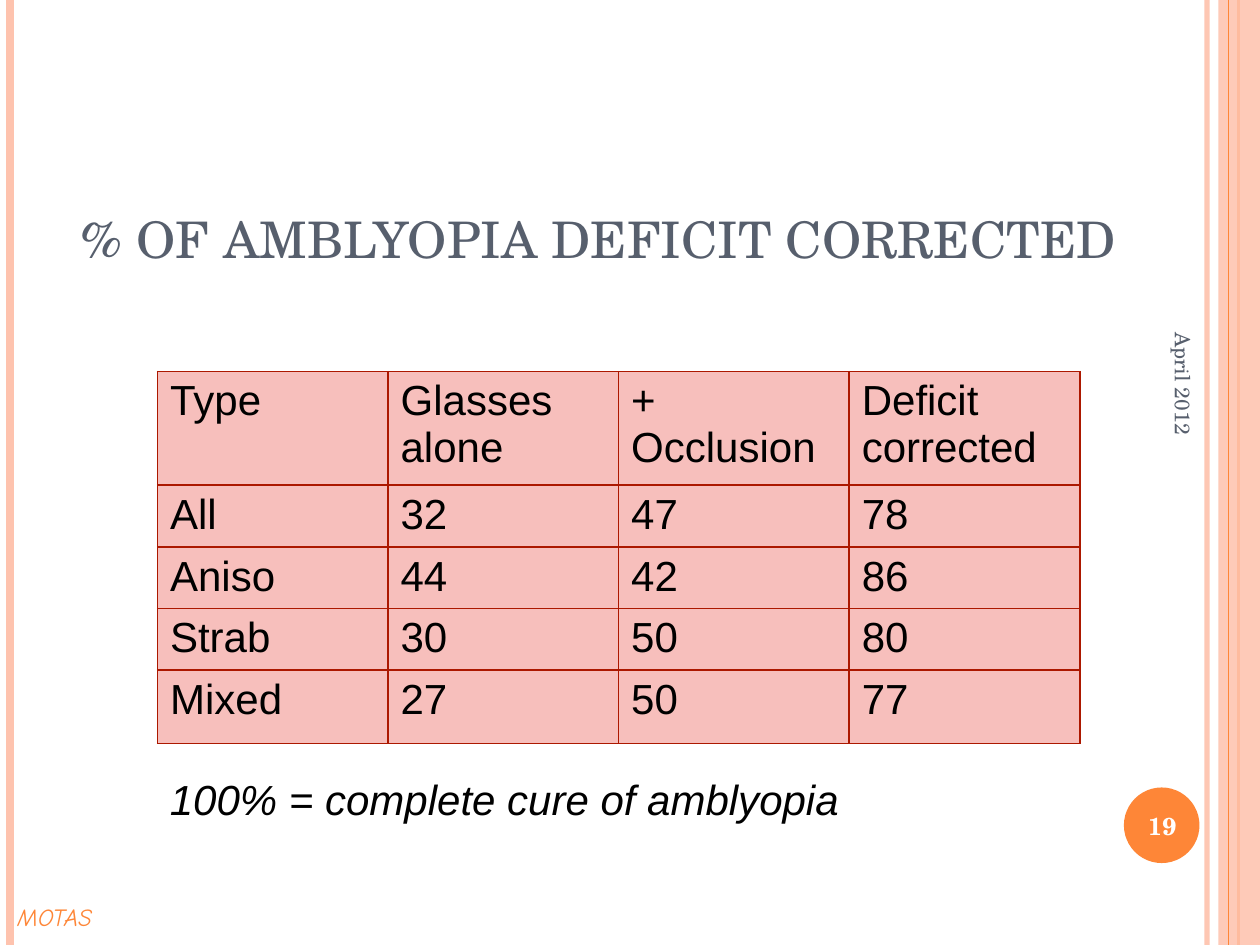
from dataclasses import dataclass
from typing import Optional

from lxml.etree import SubElement
from pptx import Presentation
from pptx.dml.color import RGBColor
from pptx.enum.shapes import MSO_CONNECTOR, MSO_SHAPE
from pptx.enum.text import MSO_ANCHOR as Anchor, MSO_AUTO_SIZE as AutoSize, PP_ALIGN as Align
from pptx.oxml.ns import qn
from pptx.util import Inches, Pt

ORANGE = RGBColor(0xFE, 0x86, 0x37)
PEACH = RGBColor(0xFE, 0xC3, 0xAE)
SLATE = RGBColor(0x57, 0x5F, 0x6D)
PINK = RGBColor(0xF7, 0xBF, 0xBC)
RED = RGBColor(0xAC, 0x18, 0x00)
BLACK = RGBColor(0, 0, 0)
WHITE = RGBColor(0xFF, 0xFF, 0xFF)
SERIF = "TeX Gyre Schola"
SANS = "Arial"
HEIGHT = 7.5


@dataclass
class Stripe:
    x: float
    color: RGBColor
    width: float
    opacity: int = 100


@dataclass
class Font:
    name: str
    size: float
    color: RGBColor
    bold: bool = False
    italic: bool = False


@dataclass
class Label:
    text: str
    box: tuple[float, float, float, float]
    font: Font
    anchor: Anchor = Anchor.TOP
    align: Align = Align.LEFT
    wrap: bool = True
    rotation: float = 0


STRIPES = [
    Stripe(9.58, PEACH, 3, 93),
    Stripe(0.08, PEACH, 4.5),
    Stripe(9.83, ORANGE, 1.5),
]
FRONT_STRIPE = Stripe(9.75, ORANGE, 0.75)
BODY = Font(SANS, 24, BLACK)
LABELS = [
    Label("MOTAS", (0.04, 7.11, 0.95, 0.34), Font("Comic Neue", 14, ORANGE, italic=True), wrap=False),
    Label("100% = complete cure of amblyopia", (1.25, 6.09, 5.68, 0.5),
          Font(SANS, 24, BLACK, italic=True), wrap=False),
    Label("April 2012", (7.64, 4.09, 3.5, 0.4), Font(SERIF, 12, SLATE), Anchor.MIDDLE, rotation=90),
    Label("19", (8.89, 6.27, 0.67, 0.57), Font(SERIF, 14, WHITE, bold=True), Anchor.MIDDLE, Align.CENTER),
]
ROWS = [
    ("Type", "Glasses alone", "+ Occlusion", "Deficit corrected"),
    ("All", "32", "47", "78"),
    ("Aniso", "44", "42", "86"),
    ("Strab", "30", "50", "80"),
    ("Mixed", "27", "50", "77"),
]
ROW_HEIGHTS = [0.9, 0.49, 0.49, 0.49, 0.58]
COLUMN_WIDTH = 1.83


def set_opacity(element, percent: int) -> None:
    color = next(element.iter(qn("a:srgbClr")))
    SubElement(color, qn("a:alpha")).set("val", str(percent * 1000))


def add_stripe(s, stripe: Stripe) -> None:
    x = Inches(stripe.x)
    line = s.shapes.add_connector(MSO_CONNECTOR.STRAIGHT, x, 0, x, Inches(HEIGHT))
    line.line.color.rgb = stripe.color
    line.line.width = Pt(stripe.width)
    if stripe.opacity < 100:
        set_opacity(line.line._ln, stripe.opacity)
    SubElement(line._element.spPr, qn("a:effectLst"))


def add_solid(s, kind: MSO_SHAPE, box: tuple, color: RGBColor, opacity: Optional[int] = None) -> None:
    sp = s.shapes.add_shape(kind, *map(Inches, box))
    sp.shadow.inherit = False
    sp.fill.solid()
    sp.fill.fore_color.rgb = color
    sp.line.fill.background()
    if opacity is not None:
        set_opacity(sp._element.spPr, opacity)


def add_run(p, text: str, font: Font):
    r = p.add_run()
    r.text = text
    r.font.name = font.name
    r.font.size = Pt(font.size)
    r.font.color.rgb = font.color
    r.font.bold = font.bold
    r.font.italic = font.italic
    return r


def add_label(s, label: Label) -> None:
    sp = s.shapes.add_textbox(*map(Inches, label.box))
    sp.rotation = label.rotation
    tf = sp.text_frame
    tf.word_wrap = label.wrap
    tf.auto_size = AutoSize.NONE if label.wrap else AutoSize.SHAPE_TO_FIT_TEXT
    tf.vertical_anchor = label.anchor
    p = tf.paragraphs[0]
    p.alignment = label.align
    add_run(p, label.text, label.font)


def format_title(s) -> None:
    sp = s.shapes.title
    sp.left, sp.top, sp.width, sp.height = map(Inches, (0.54, 0.52, 9, 2.28))
    tf = sp.text_frame
    tf.word_wrap = True
    tf.auto_size = AutoSize.NONE
    tf.vertical_anchor = Anchor.BOTTOM
    tf.margin_bottom = Inches(0.65)
    p = tf.paragraphs[0]
    p.alignment = Align.LEFT
    r = add_run(p, "% of amblyopia deficit corrected", Font(SERIF, 36, SLATE))
    r.font._element.set("cap", "small")


def add_borders(cell) -> None:
    tc_pr = cell._tc.get_or_add_tcPr()
    for i, side in enumerate(("lnL", "lnR", "lnT", "lnB")):
        ln = tc_pr.makeelement(qn(f"a:{side}"), {"w": str(Pt(1))})
        fill = SubElement(ln, qn("a:solidFill"))
        SubElement(fill, qn("a:srgbClr")).set("val", str(RED))
        tc_pr.insert(i, ln)


def add_results(s) -> None:
    columns = len(ROWS[0])
    frame = s.shapes.add_table(len(ROWS), columns, Inches(1.25), Inches(2.95),
                               Inches(COLUMN_WIDTH * columns), Inches(sum(ROW_HEIGHTS)))
    table = frame.table
    table.first_row = False
    table.horz_banding = False
    for column in table.columns:
        column.width = Inches(COLUMN_WIDTH)
    for row, height, values in zip(table.rows, ROW_HEIGHTS, ROWS):
        row.height = Inches(height)
        for cell, value in zip(row.cells, values):
            cell.fill.solid()
            cell.fill.fore_color.rgb = PINK
            add_borders(cell)
            add_run(cell.text_frame.paragraphs[0], value, BODY)


def main() -> None:
    prs = Presentation()
    prs.slide_width, prs.slide_height = Inches(10), Inches(HEIGHT)
    s = prs.slides.add_slide(prs.slide_layouts[5])
    for stripe in STRIPES:
        add_stripe(s, stripe)
    add_solid(s, MSO_SHAPE.RECTANGLE, (9.67, 0, 0.33, HEIGHT), PEACH, 87)
    add_stripe(s, FRONT_STRIPE)
    add_solid(s, MSO_SHAPE.OVAL, (8.92, 6.25, 0.6, 0.6), ORANGE)
    format_title(s)
    add_results(s)
    for label in LABELS:
        add_label(s, label)
    prs.save("out.pptx")


if __name__ == "__main__":
    main()
